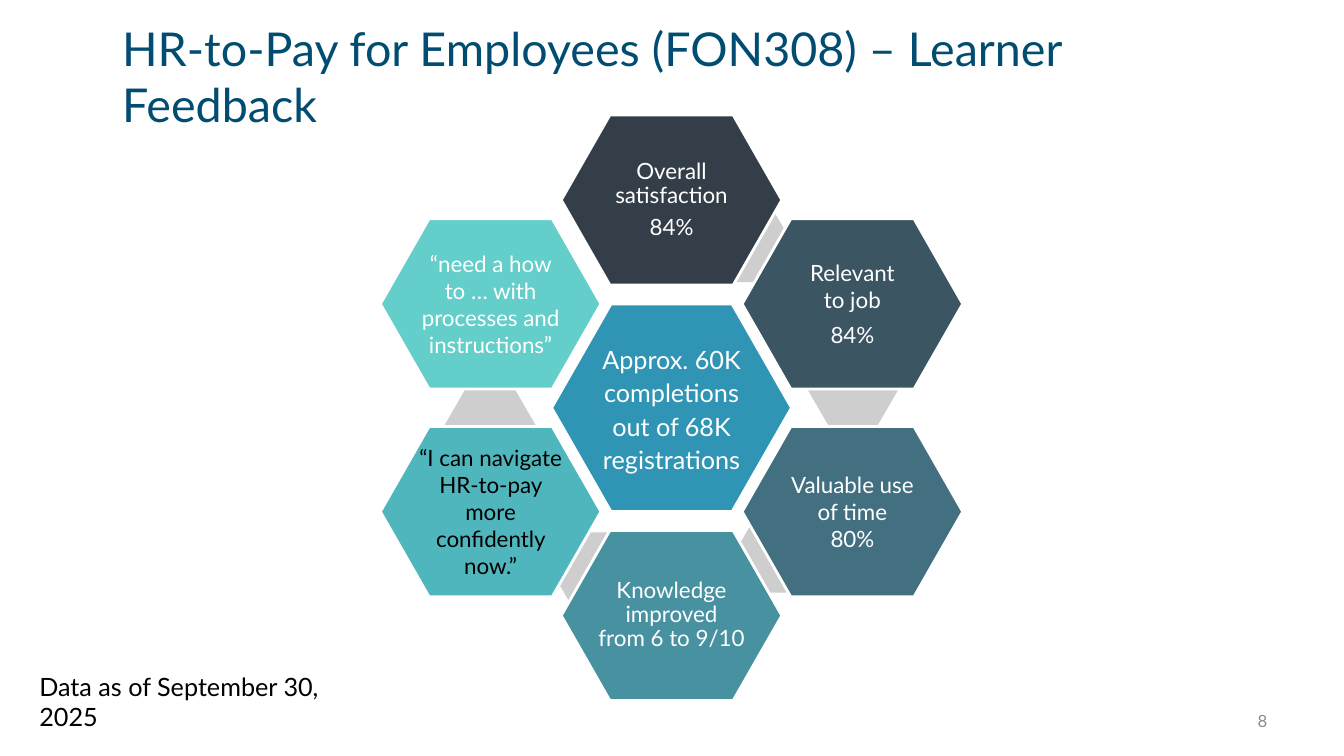
from dataclasses import dataclass

from pptx import Presentation
from pptx.dml.color import RGBColor
from pptx.enum.shapes import MSO_SHAPE
from pptx.enum.text import MSO_ANCHOR, PP_ALIGN
from pptx.util import Pt


@dataclass(frozen=True)
class Theme:
    font: str = "Lato"
    title: str = "004D71"
    text: str = "000000"
    white: str = "FFFFFF"
    muted: str = "8C8C8C"
    accent: str = "CECECF"
    hub: str = "3095B4"
    title_size: float = 33.3
    body_size: float = 18
    cell_size: float = 16
    number_size: float = 12


T = Theme()
CENTER_X, CENTER_Y = 479.7, 291.3
COLUMN, ROW = 129.2, 148.4  # honeycomb pitch
HUB_SIZE = (171.4, 148.3)
CELL_SIZE = (157.6, 121.6)
ACCENT_SIZE = (64.8, 55.4)

# column, row, fill, paragraphs, text format
CELLS = [
    (0, -1, "333E48", ["Overall satisfaction", "84%"], dict(spacing=0.9, after=[5.6])),
    (1, -0.5, "3C5563", ["Relevant", "to job", "84%"], dict(after=[0, 6])),
    (1, 0.5, "437080", ["Valuable use of time", "80%"], {}),
    (0, 1, "4891A0", ["Knowledge improved", "from 6 to 9/10"], dict(spacing=0.9)),
    (-1, 0.5, "50B6BD", ["“I can navigate HR-to-pay more confidently now.”"],
     dict(color=T.text)),
    (-1, -0.5, "63CECA", ["“need a how to … with processes and instructions”"], {}),
]
# offsets from the hub; each accent lies under the cell of the same rank
ACCENTS = [(54, -117.4), (129.6, -13), (77, 104.4), (-53.3, 116.6), (-129.6, 12.2)]


def write(shape, paragraphs, size=T.body_size, color=T.text, align=PP_ALIGN.LEFT,
          anchor=MSO_ANCHOR.TOP, spacing=1.0, after=(), inset=None):
    tf = shape.text_frame
    tf.word_wrap = True
    tf.vertical_anchor = anchor
    if inset is not None:
        tf.margin_left = tf.margin_right = tf.margin_top = tf.margin_bottom = Pt(inset)
    for i, text in enumerate(paragraphs):
        p = tf.paragraphs[0] if i == 0 else tf.add_paragraph()
        p.alignment = align
        p.line_spacing = spacing
        p.space_before = Pt(0)
        p.space_after = Pt(after[i] if i < len(after) else 0)
        r = p.add_run()
        r.text = text
        r.font.name = T.font
        r.font.size = Pt(size)
        r.font.color.rgb = RGBColor.from_string(color)


def add_text(s, box, text, **text_format):
    write(s.shapes.add_textbox(*map(Pt, box)), [text], **text_format)


def add_hexagon(s, dx, dy, size, fill, adjust=0.286, outlined=True):
    """Place a hexagon by the offset of its middle from the hub's middle."""
    w, h = size
    sp = s.shapes.add_shape(MSO_SHAPE.HEXAGON, Pt(CENTER_X + dx - w / 2),
                            Pt(CENTER_Y + dy - h / 2), Pt(w), Pt(h))
    sp.shadow.inherit = False
    sp.adjustments[0] = adjust
    sp.fill.solid()
    sp.fill.fore_color.rgb = RGBColor.from_string(fill)
    if outlined:
        sp.line.color.rgb = RGBColor.from_string(T.white)
        sp.line.width = Pt(2)
    else:
        sp.line.fill.background()
    return sp


def add_title(s, text):
    title = s.shapes.title
    title.left, title.top, title.width, title.height = map(Pt, (80, 10.8, 815, 69))
    write(title, [text], size=T.title_size, color=T.title)


def add_honeycomb(s):
    centred = dict(align=PP_ALIGN.CENTER, anchor=MSO_ANCHOR.MIDDLE)
    hub = add_hexagon(s, 0, 0, HUB_SIZE, T.hub)
    write(hub, ["Approx. 60K completions out of 68K registrations"],
          color=T.white, spacing=1.1, inset=2, **centred)
    for i, (column, row, fill, paragraphs, text_format) in enumerate(CELLS):
        if i < len(ACCENTS):
            add_hexagon(s, *ACCENTS[i], ACCENT_SIZE, T.accent, 0.289, outlined=False)
        cell = add_hexagon(s, column * COLUMN, row * ROW, CELL_SIZE, fill)
        cell_format = dict(size=T.cell_size, color=T.white, inset=1.5, **centred)
        write(cell, paragraphs, **(cell_format | text_format))


def main():
    prs = Presentation()
    prs.slide_width, prs.slide_height = Pt(960), Pt(540)
    s = prs.slides.add_slide(prs.slide_layouts[5])
    add_title(s, "HR-to-Pay for Employees (FON308) – Learner Feedback")
    add_honeycomb(s)
    add_text(s, (21, 476, 257.8, 28.8), "Data as of September 30, 2025")
    add_text(s, (688.3, 500.4, 224, 28.8), "8", size=T.number_size, color=T.muted,
             align=PP_ALIGN.RIGHT, anchor=MSO_ANCHOR.MIDDLE)
    prs.save("out.pptx")


if __name__ == "__main__":
    main()
